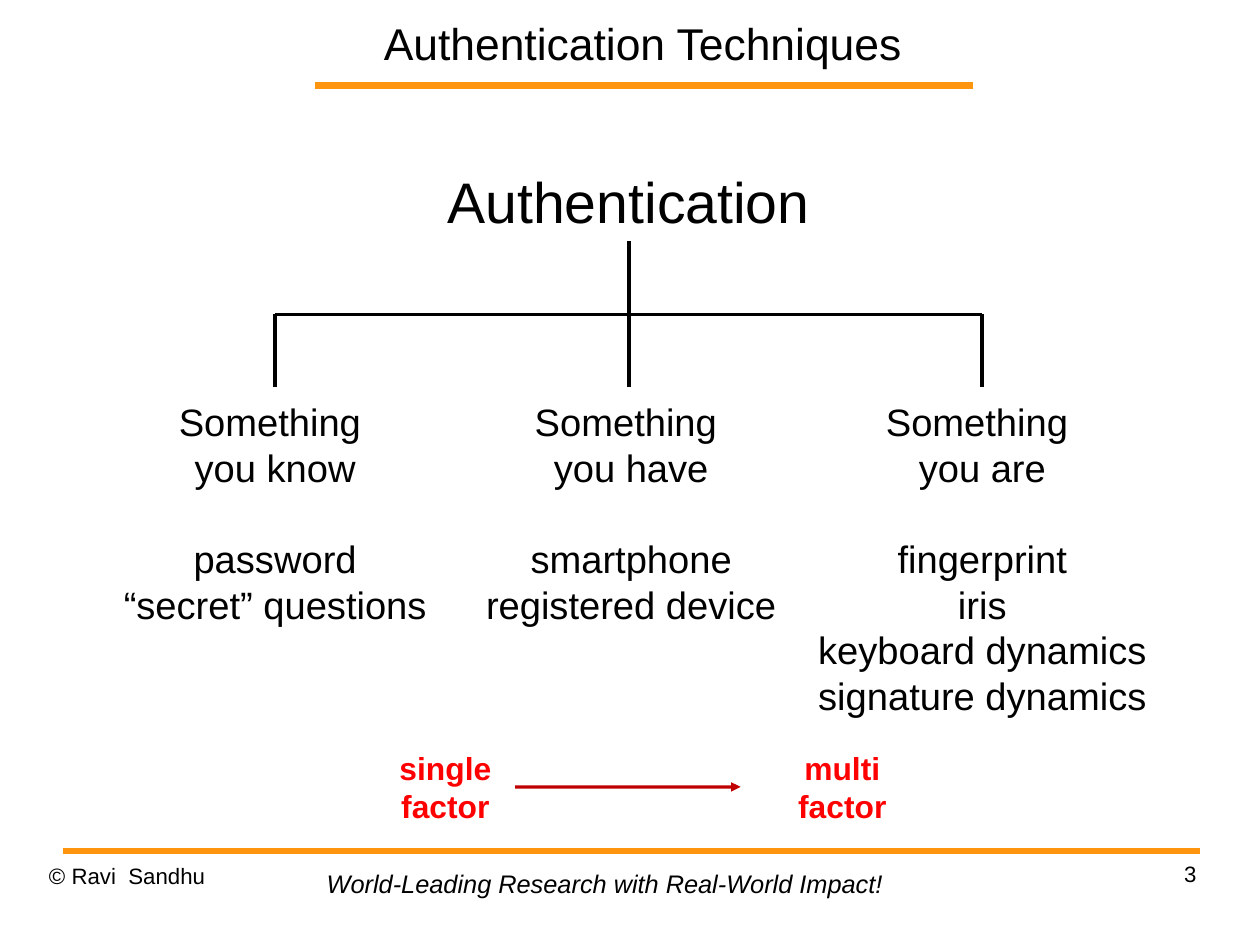
from dataclasses import dataclass

from lxml import etree
from pptx import Presentation
from pptx.dml.color import RGBColor
from pptx.enum.shapes import MSO_CONNECTOR
from pptx.enum.text import MSO_ANCHOR, MSO_AUTO_SIZE, PP_ALIGN
from pptx.oxml.ns import qn
from pptx.shapes.autoshape import Shape
from pptx.shapes.connector import Connector
from pptx.slide import Slide
from pptx.util import Cm, Pt

STRAIGHT = MSO_CONNECTOR.STRAIGHT
LEFT, CENTER, RIGHT = PP_ALIGN.LEFT, PP_ALIGN.CENTER, PP_ALIGN.RIGHT
TOP, MIDDLE = MSO_ANCHOR.TOP, MSO_ANCHOR.MIDDLE
GROW, FIXED = MSO_AUTO_SIZE.SHAPE_TO_FIT_TEXT, MSO_AUTO_SIZE.NONE
LEFT_SIDE, BOTTOM_SIDE = 1, 2

WIDTH, HEIGHT = Cm(28), Cm(21)
COLUMN, ROW = WIDTH / 100, HEIGHT / 100
LINE_HEIGHT = 1.2
FONT = "Arial"
COLORS = {
    "text": "000000",
    "rule": "FF950E",
    "factor": "FF0000",
    "arrow": "C00000",
}


@dataclass(frozen=True)
class Label:
    lines: tuple[str, ...]
    column: float
    row: float
    columns: float
    rows: float
    size: float
    align: PP_ALIGN = CENTER
    anchor: MSO_ANCHOR = TOP
    color: str = "text"
    bold: bool = False
    italic: bool = False
    padded: bool = True
    wrap: bool = False
    gap_before: int = 0


@dataclass(frozen=True)
class Line:
    start: tuple[float, float]
    end: tuple[float, float]
    color: str
    width: float


@dataclass(frozen=True)
class Category:
    center: float
    columns: float
    rows: float
    lines: tuple[str, ...]


TITLE = Label(("Authentication Techniques",), 21.83, 0, 58.33, 9.07, 28,
              anchor=MIDDLE, padded=False, wrap=True)
COPYRIGHT = Label(("© Ravi  Sandhu",), 3.89, 91.27, 23.32, 6.89, 14,
                  align=LEFT, padded=False, wrap=True)
NUMBER = Label(("3",), 71.65, 91.05, 23.32, 6.89, 14,
               align=RIGHT, padded=False, wrap=True)
SLOGAN = Label(("World-Leading Research with Real-World Impact!",),
               25.04, 91.27, 46.08, 4.47, 16, align=LEFT, italic=True)
ROOT = Label(("Authentication",), 34.47, 17, 30.84, 8.52, 36)
SINGLE = Label(("single factor",), 27.28, 78.62, 16.15, 9.31, 20,
               color="factor", bold=True, wrap=True)
MULTI = Label(("multi", "factor"), 58.78, 78.62, 16.15, 9.31, 20,
              color="factor", bold=True, wrap=True)

CATEGORIES = (
    Category(21.84, 26.13, 25.64,
             ("Something ", "you know", "password", "“secret” questions")),
    Category(50.09, 25.13, 25.64,
             ("Something ", "you have", "smartphone", "registered device")),
    Category(77.96, 28.21, 35.44,
             ("Something ", "you are", "fingerprint", "iris",
              "keyboard dynamics", "signature dynamics")),
)
CATEGORY_ROW = 41.55
EXAMPLES_START = 2

TRUNK, BRANCH_STEP = 49.89, 28.03
BRANCHES = tuple(TRUNK + BRANCH_STEP * offset for offset in (-1, 0, 1))
ROOT_ROW, BAR_ROW, LEAF_ROW = 25.52, 33.25, 40.98
RULES = (
    Line((25.04, 9.07), (77.2, 9.07), "rule", 4.31),
    Line((4.97, 90.06), (95.25, 90.06), "rule", 4.31),
)
STEM = Line((TRUNK, ROOT_ROW), (TRUNK, BAR_ROW), "text", 2.5)
BAR = Line((BRANCHES[0], BAR_ROW), (BRANCHES[-1], BAR_ROW), "text", 2)
ARROW = Line((40.89, 83.28), (58.78, 83.28), "arrow", 2)


def draw_label(slide: Slide, label: Label) -> Shape:
    shape = slide.shapes.add_textbox(
        round(label.column * COLUMN), round(label.row * ROW),
        round(label.columns * COLUMN), round(label.rows * ROW))
    frame = shape.text_frame
    frame.word_wrap = label.wrap
    frame.auto_size = GROW if label.padded else FIXED
    frame.vertical_anchor = label.anchor
    if not label.padded:
        frame.margin_left = frame.margin_right = 0
        frame.margin_top = frame.margin_bottom = 0
    frame.text = "\n".join(label.lines)
    line_height = Pt(label.size * LINE_HEIGHT)
    for index, paragraph in enumerate(frame.paragraphs):
        paragraph.alignment = label.align
        paragraph.line_spacing = line_height
        if index and index == label.gap_before:
            paragraph.space_before = line_height
        paragraph.font.name = FONT
        paragraph.font.size = Pt(label.size)
        paragraph.font.bold = label.bold
        paragraph.font.italic = label.italic
        paragraph.font.color.rgb = RGBColor.from_string(COLORS[label.color])
    return shape


def draw_line(slide: Slide, line: Line) -> Connector:
    (start_column, start_row), (end_column, end_row) = line.start, line.end
    connector = slide.shapes.add_connector(
        STRAIGHT, round(start_column * COLUMN), round(start_row * ROW),
        round(end_column * COLUMN), round(end_row * ROW))
    connector.line.color.rgb = RGBColor.from_string(COLORS[line.color])
    connector.line.width = Pt(line.width)
    etree.SubElement(connector.element.spPr, qn("a:effectLst"))
    return connector


def add_arrowhead(connector: Connector) -> None:
    outline = connector.element.spPr.find(qn("a:ln"))
    etree.SubElement(outline, qn("a:tailEnd"), type="triangle")


def draw_tree(slide: Slide) -> None:
    root = draw_label(slide, ROOT)
    draw_line(slide, STEM).begin_connect(root, BOTTOM_SIDE)
    draw_line(slide, BAR)
    for branch in BRANCHES:
        draw_line(slide, Line((branch, BAR_ROW), (branch, LEAF_ROW), "text", 2.5))
    for category in CATEGORIES:
        draw_label(slide, Label(
            category.lines, category.center - category.columns / 2,
            CATEGORY_ROW, category.columns, category.rows, 24,
            gap_before=EXAMPLES_START))


def draw_factors(slide: Slide) -> None:
    draw_label(slide, SINGLE)
    multi = draw_label(slide, MULTI)
    arrow = draw_line(slide, ARROW)
    arrow.end_connect(multi, LEFT_SIDE)
    add_arrowhead(arrow)


def main() -> None:
    presentation = Presentation()
    presentation.slide_width, presentation.slide_height = WIDTH, HEIGHT
    slide = presentation.slides.add_slide(presentation.slide_layouts[6])
    for rule in RULES:
        draw_line(slide, rule)
    for label in (COPYRIGHT, NUMBER, SLOGAN, TITLE):
        draw_label(slide, label)
    draw_tree(slide)
    draw_factors(slide)
    presentation.save("out.pptx")


if __name__ == "__main__":
    main()
